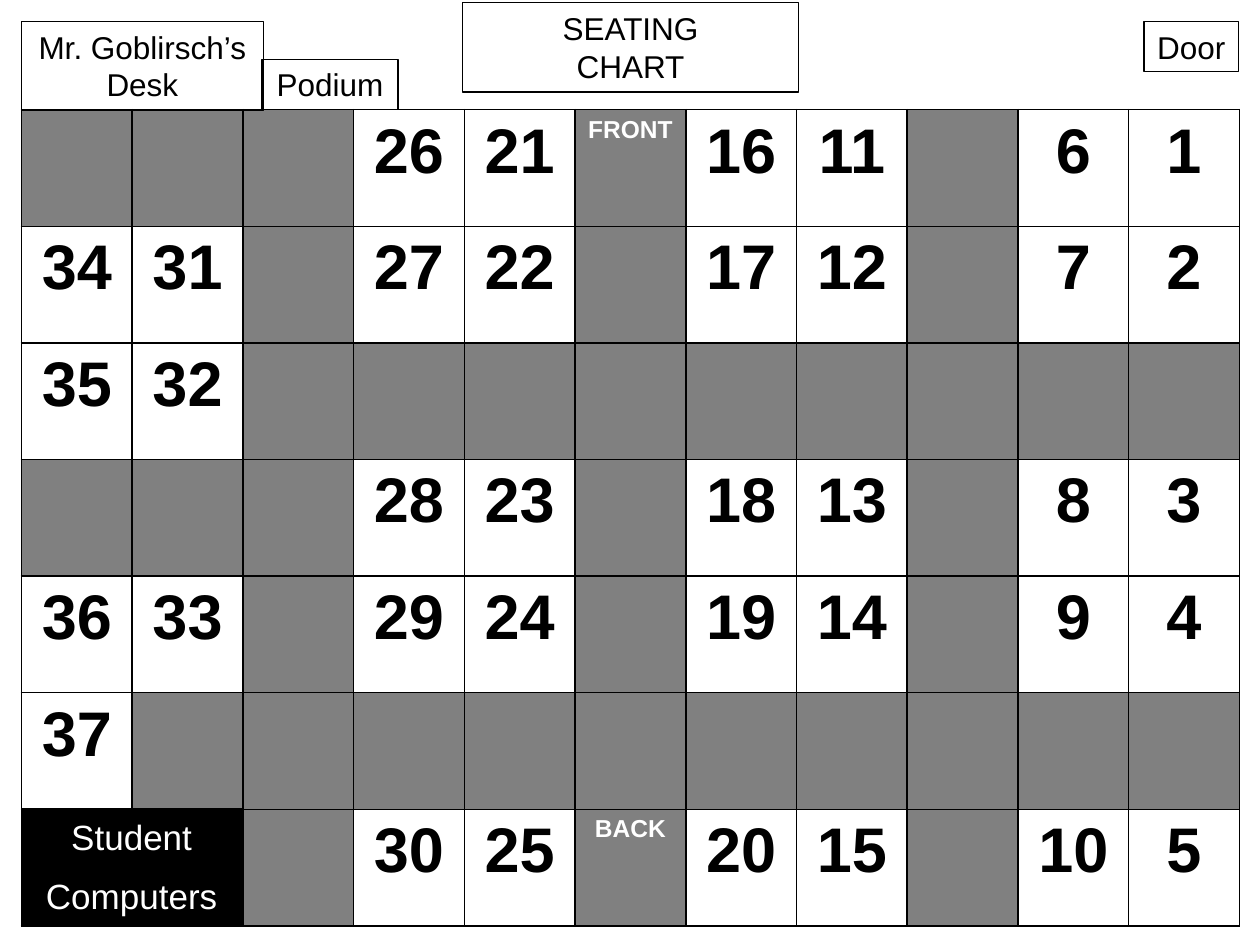
import pptx
import pptx.util
import pptx.dml.color
import pptx.enum.text
import pptx.oxml
import pptx.oxml.ns
from pptx.util import Inches, Pt

BLACK = pptx.dml.color.RGBColor(0x00, 0x00, 0x00)
WHITE = pptx.dml.color.RGBColor(0xFF, 0xFF, 0xFF)
AISLE_GREY = pptx.dml.color.RGBColor(0x80, 0x80, 0x80)
CENTER = pptx.enum.text.PP_ALIGN.CENTER


def write_line(paragraph, text, size, color, bold=False):
    paragraph.alignment = CENTER
    run = paragraph.add_run()
    run.text = text
    run.font.name = "Arial"
    run.font.size = Pt(size)
    run.font.bold = bold
    run.font.color.rgb = color


def add_borders(cell):
    properties = cell._tc.get_or_add_tcPr()
    for position, side in enumerate(("lnL", "lnR", "lnT", "lnB")):
        border = pptx.oxml.parse_xml(
            f'<a:{side} {pptx.oxml.ns.nsdecls("a")} w="12700">'
            f'<a:solidFill><a:srgbClr val="{BLACK}"/></a:solidFill></a:{side}>'
        )
        properties.insert(position, border)


presentation = pptx.Presentation()
presentation.slide_width = Inches(10)
presentation.slide_height = Inches(7.5)
slide = presentation.slides.add_slide(presentation.slide_layouts[6])

# Seats: a number is a desk, "" is aisle, "#" is the computer bench
seat_rows = [
    ["", "", "", "26", "21", "FRONT", "16", "11", "", "6", "1"],
    ["34", "31", "", "27", "22", "", "17", "12", "", "7", "2"],
    ["35", "32", "", "", "", "", "", "", "", "", ""],
    ["", "", "", "28", "23", "", "18", "13", "", "8", "3"],
    ["36", "33", "", "29", "24", "", "19", "14", "", "9", "4"],
    ["37", "", "", "", "", "", "", "", "", "", ""],
    ["#", "#", "", "30", "25", "BACK", "20", "15", "", "10", "5"],
]
seating = slide.shapes.add_table(
    len(seat_rows), len(seat_rows[0]),
    Inches(0.17), Inches(0.87), Inches(9.67), Inches(6.48),
).table
seating.first_row = False
seating.horz_banding = False

for row, seats in enumerate(seat_rows):
    for column, seat in enumerate(seats):
        cell = seating.cell(row, column)
        is_desk = seat.isdigit()
        cell.fill.solid()
        cell.fill.fore_color.rgb = (
            WHITE if is_desk else BLACK if seat == "#" else AISLE_GREY
        )
        add_borders(cell)
        if is_desk:
            write_line(cell.text_frame.paragraphs[0], seat, 36, BLACK, True)
        elif seat.isalpha():
            write_line(cell.text_frame.paragraphs[0], seat, 14, WHITE, True)

# Room labels: lines, left, top, width, height, size, colour, gap between lines
room_labels = [
    (["Mr. Goblirsch’s", "Desk"], 0.17, 0.17, 1.92, 0.71, 18, BLACK, 0),
    (["Podium"], 2.08, 0.47, 1.08, 0.4, 18, BLACK, 0),
    (["Student", "Computers"], 0.17, 6.42, 1.75, 0.93, 20, WHITE, 10),
    (["Door"], 9.08, 0.17, 0.75, 0.4, 18, BLACK, 0),
    (["SEATING", "CHART"], 3.67, 0.02, 2.67, 0.71, 18, BLACK, 0),
]
for lines, left, top, width, height, size, color, gap in room_labels:
    label = slide.shapes.add_textbox(
        Inches(left), Inches(top), Inches(width), Inches(height)
    )
    label.line.color.rgb = BLACK
    label.line.width = Pt(0.75)
    frame = label.text_frame
    frame.word_wrap = False
    for number, text in enumerate(lines):
        paragraph = frame.add_paragraph() if number else frame.paragraphs[0]
        paragraph.space_before = Pt(gap if number else 0)
        write_line(paragraph, text, size, color)

presentation.save("out.pptx")
